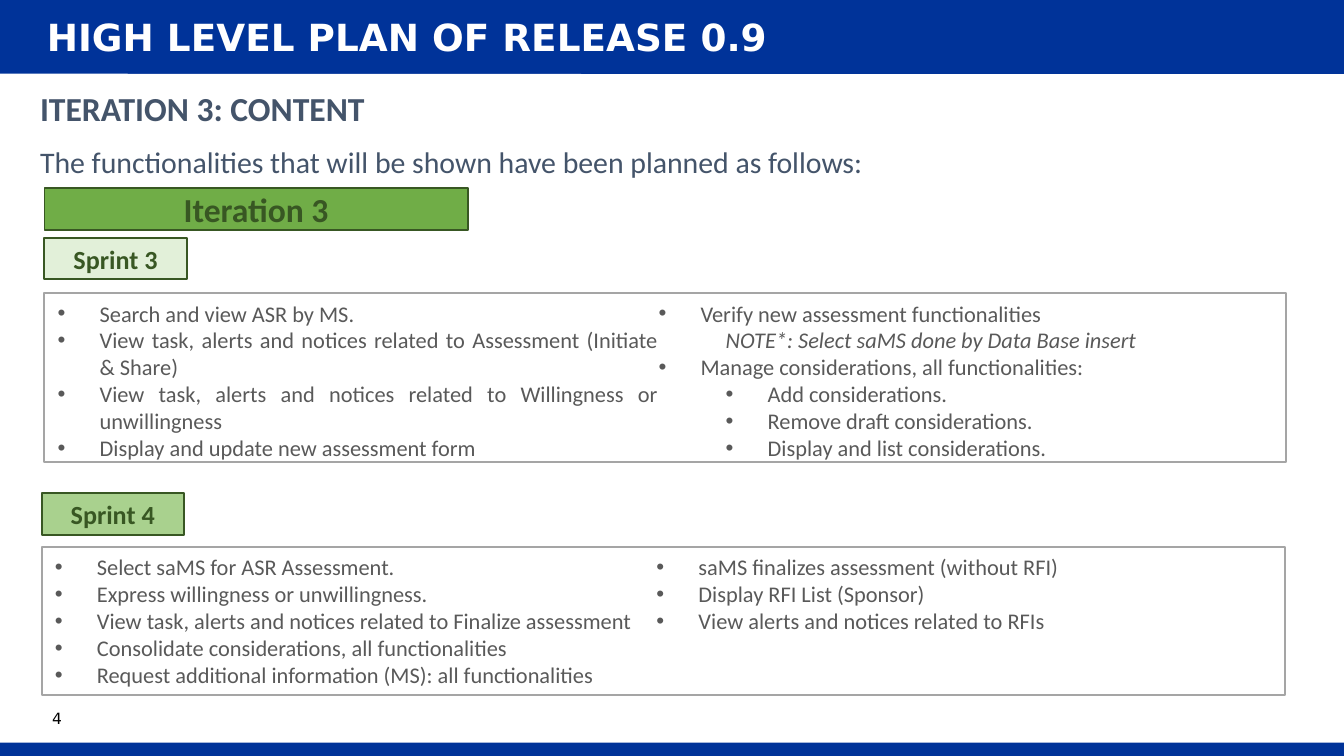
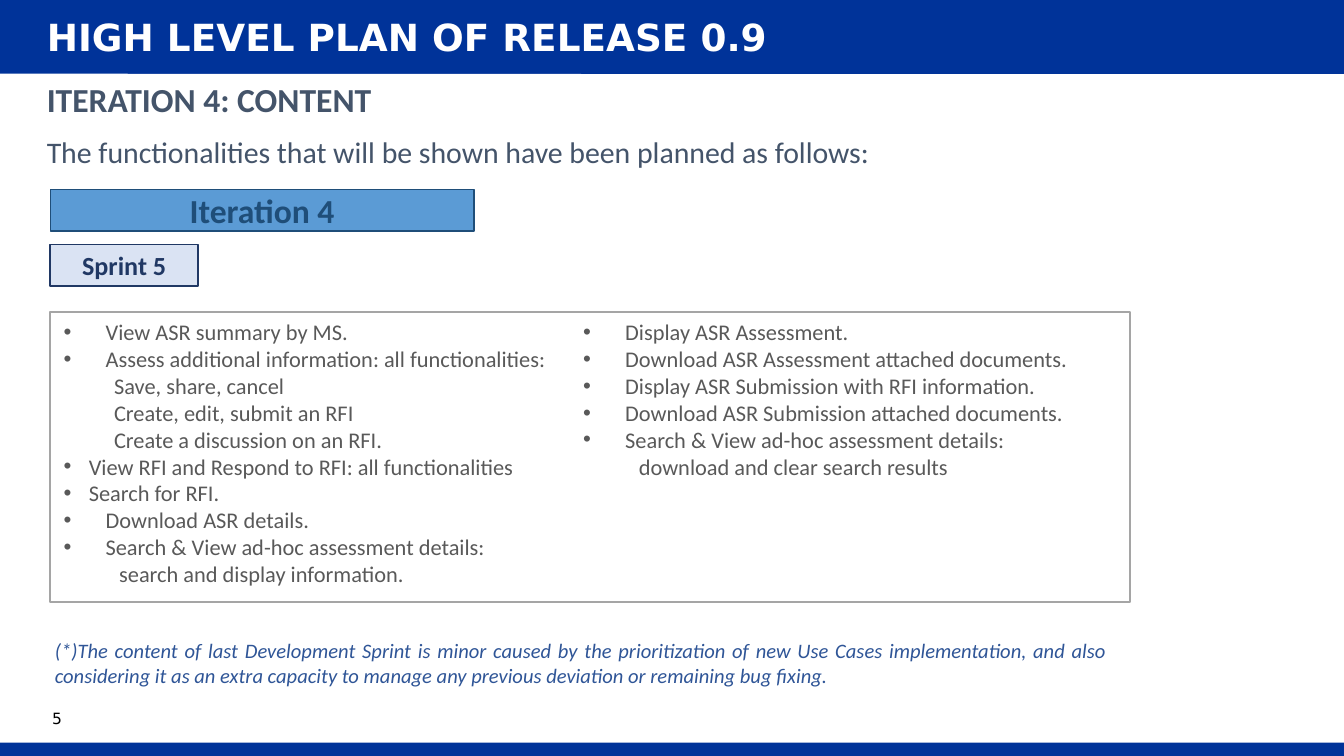
from lxml import etree
from pptx import Presentation
from pptx.dml.color import RGBColor
from pptx.enum.shapes import MSO_CONNECTOR, MSO_SHAPE
from pptx.enum.text import MSO_ANCHOR, PP_ALIGN
from pptx.oxml.ns import qn
from pptx.util import Pt

RECTANGLE = MSO_SHAPE.RECTANGLE
STRAIGHT = MSO_CONNECTOR.STRAIGHT
TOP, MIDDLE = MSO_ANCHOR.TOP, MSO_ANCHOR.MIDDLE
LEFT, CENTER, JUSTIFY = PP_ALIGN.LEFT, PP_ALIGN.CENTER, PP_ALIGN.JUSTIFY

WIDTH, HEIGHT = 720, 405
BAND_HEIGHT, FOOTER_HEIGHT = 39.6, 7.2
TAG_HEIGHT, ITERATION_WIDTH = 22.3, 226.8
BODY_FONT, TITLE_FONT = "Calibri", "DejaVu Sans"
LINE_STEP = 14.65

WHITE = RGBColor(0xFF, 0xFF, 0xFF)
BLACK = RGBColor(0, 0, 0)
NAVY = RGBColor(0x00, 0x33, 0x99)
SLATE = RGBColor(0x44, 0x54, 0x6A)
GRAY = RGBColor(0xA5, 0xA5, 0xA5)
DARK_GRAY = RGBColor(0x59, 0x59, 0x59)
GREEN = RGBColor(0x70, 0xAD, 0x47)
PALE_GREEN = RGBColor(0xE2, 0xF0, 0xD9)
LIGHT_GREEN = RGBColor(0xA9, 0xD1, 0x8E)
DARK_GREEN = RGBColor(0x38, 0x57, 0x23)
BLUE = RGBColor(0x5B, 0x9B, 0xD5)
PALE_BLUE = RGBColor(0xDA, 0xE3, 0xF3)
DARK_BLUE = RGBColor(0x1F, 0x4E, 0x79)
DEEP_BLUE = RGBColor(0x20, 0x38, 0x64)
NOTE_BLUE = RGBColor(0x2F, 0x55, 0x97)

BULLET = dict(margin=22.5, hanging=22.5)
TIGHT_BULLET = dict(margin=13.5, hanging=13.5)
SUB_BULLET = dict(margin=58.5, hanging=22.5)
REMARK = dict(margin=36, italic=True)
DETAIL = dict(margin=27)
CONTINUATION = dict(margin=29.8)
COLUMN_START = dict(BULLET, before=LINE_STEP)

SPRINT_3 = [
    ("Search and view ASR by MS.", BULLET),
    ("View task, alerts and notices related to Assessment (Initiate & Share)", BULLET),
    ("View task, alerts and notices related to Willingness or unwillingness", BULLET),
    ("Display and update new assessment form", BULLET),
    ("Verify new assessment functionalities", BULLET),
    ("NOTE*: Select saMS done by Data Base insert", REMARK),
    ("Manage considerations, all functionalities:", BULLET),
    ("Add considerations.", SUB_BULLET),
    ("Remove draft considerations.", SUB_BULLET),
    ("Display and list considerations.", SUB_BULLET),
]
SPRINT_4 = [
    ("Select saMS for ASR Assessment.", BULLET),
    ("Express willingness or unwillingness.", BULLET),
    ("View task, alerts and notices related to Finalize assessment", BULLET),
    ("Consolidate considerations, all functionalities", BULLET),
    ("Request additional information (MS): all functionalities", BULLET),
    ("saMS finalizes assessment (without RFI)", BULLET),
    ("Display RFI List (Sponsor)", BULLET),
    ("View alerts and notices related to RFIs", BULLET),
]
SPRINT_5 = [
    ("View ASR summary by MS.", BULLET),
    ("Assess additional information: all functionalities:", BULLET),
    ("Save, share, cancel", DETAIL),
    ("Create, edit, submit an RFI", DETAIL),
    ("Create a discussion on an RFI.", DETAIL),
    ("View RFI and Respond to RFI: all functionalities", TIGHT_BULLET),
    ("Search for RFI.", TIGHT_BULLET),
    ("Download ASR details.", BULLET),
    ("Search & View ad-hoc assessment details:", BULLET),
    ("search and display information.", CONTINUATION),
    ("Display ASR Assessment.", COLUMN_START),
    ("Download ASR Assessment attached documents.", BULLET),
    ("Display ASR Submission with RFI information.", BULLET),
    ("Download ASR Submission attached documents.", BULLET),
    ("Search & View ad-hoc assessment details:", BULLET),
    ("download and clear search results", CONTINUATION),
]
NOTE = (
    "(*)The content of last Development Sprint is minor caused by the prioritization "
    "of new Use Cases implementation, and also considering it as an extra capacity "
    "to manage any previous deviation or remaining bug fixing."
)


def write(frame, text, first=True, size=12, color=DARK_GRAY, font=BODY_FONT, bold=False,
          italic=False, align=JUSTIFY, spacing=None, before=0, margin=0, hanging=0):
    para = frame.paragraphs[0] if first else frame.add_paragraph()
    properties = para._p.get_or_add_pPr()
    properties.set("marL", str(int(Pt(margin))))
    properties.set("indent", str(-int(Pt(hanging))))
    if hanging:
        etree.SubElement(properties, qn("a:buFont"), typeface="Arial")
        etree.SubElement(properties, qn("a:buChar"), char="•")
    para.alignment = align
    para.space_before = Pt(before)
    if spacing:
        para.line_spacing = spacing
    span = para.add_run()
    span.text = text
    span.font.name = font
    span.font.size = Pt(size)
    span.font.bold = bold
    span.font.italic = italic
    span.font.color.rgb = color


def add_box(page, left, top, width, height, fill, line=None):
    box = page.shapes.add_shape(RECTANGLE, Pt(left), Pt(top), Pt(width), Pt(height))
    box.shadow.inherit = False
    box.fill.solid()
    box.fill.fore_color.rgb = fill
    if line is None:
        box.line.fill.background()
    else:
        box.line.color.rgb = line
        box.line.width = Pt(1)
    return box


def add_frame(page, left, top, width, height, anchor=TOP):
    box = page.shapes.add_textbox(Pt(left), Pt(top), Pt(width), Pt(height))
    frame = box.text_frame
    frame.word_wrap = True
    frame.vertical_anchor = anchor
    return frame


def add_tag(page, left, top, width, label, size, fill, ink):
    box = add_box(page, left, top, width, TAG_HEIGHT, fill, ink)
    write(box.text_frame, label, size=size, color=ink, bold=True, align=CENTER)


def add_page(deck, number):
    page = deck.slides.add_slide(deck.slide_layouts[6])
    add_box(page, 0, 0, WIDTH, BAND_HEIGHT, NAVY)
    rule = page.shapes.add_connector(STRAIGHT, 0, Pt(BAND_HEIGHT), Pt(WIDTH), Pt(40))
    rule.line.color.rgb = WHITE
    rule.line.width = Pt(0.25)
    etree.SubElement(rule._element.spPr, qn("a:effectLst"))
    add_box(page, 0, HEIGHT - FOOTER_HEIGHT, WIDTH, FOOTER_HEIGHT, NAVY)

    frame = add_frame(page, 28, 378, 24.5, 14.4)
    frame.margin_left = frame.margin_top = frame.margin_right = frame.margin_bottom = 0
    write(frame, str(number), size=8.3, color=BLACK, font=TITLE_FONT, align=LEFT,
          spacing=Pt(12))
    frame = add_frame(page, 18, -7.2, 663, 56.2, MIDDLE)
    write(frame, "HIGH LEVEL PLAN OF RELEASE 0.9", size=20, color=WHITE, font=TITLE_FONT,
          bold=True, align=LEFT, spacing=0.9)
    return page


def add_heading(page, left, top, iteration):
    frame = add_frame(page, left, top, 690, 77)
    write(frame, f"ITERATION {iteration}: CONTENT", size=18, color=SLATE, bold=True,
          spacing=0.9)
    write(frame, "The functionalities that will be shown have been planned as follows:",
          first=False, size=16, color=SLATE, spacing=0.9, before=10)


def add_sprint(page, left, top, width, height, number, tag_width, offset, fill, ink, items):
    add_tag(page, left, top, tag_width, f"Sprint {number}", 14, fill, ink)
    frame = add_box(page, left, top + offset, width, height, WHITE, GRAY).text_frame
    frame.vertical_anchor = TOP
    frame.margin_right = Pt(14.4)
    frame._txBody.bodyPr.set("numCol", "2")
    for index, (text, style) in enumerate(items):
        write(frame, text, first=index == 0, **style)


def build_iteration_3(deck):
    page = add_page(deck, 4)
    add_heading(page, 14.4, 46, 3)
    add_tag(page, 23.8, 100.8, ITERATION_WIDTH, "Iteration 3", 18, GREEN, DARK_GREEN)
    add_sprint(page, 23.8, 127.4, 665.3, 90.7, 3, 76.3, 29.6, PALE_GREEN, DARK_GREEN,
               SPRINT_3)
    add_sprint(page, 22.3, 264.2, 666, 79.2, 4, 76.3, 28.8, LIGHT_GREEN, DARK_GREEN,
               SPRINT_4)


def build_iteration_4(deck):
    page = add_page(deck, 5)
    add_heading(page, 18, 41, 4)
    add_tag(page, 27, 101.5, ITERATION_WIDTH, "Iteration 4", 18, BLUE, DARK_BLUE)
    add_sprint(page, 27, 131, 578.2, 155.5, 5, 79.2, 36, PALE_BLUE, DEEP_BLUE, SPRINT_5)
    frame = add_frame(page, 22.3, 338.4, 578.2, 33.8)
    write(frame, NOTE, size=11, color=NOTE_BLUE, italic=True)


def main():
    deck = Presentation()
    deck.slide_width, deck.slide_height = Pt(WIDTH), Pt(HEIGHT)
    build_iteration_3(deck)
    build_iteration_4(deck)
    deck.save("out.pptx")


if __name__ == "__main__":
    main()
